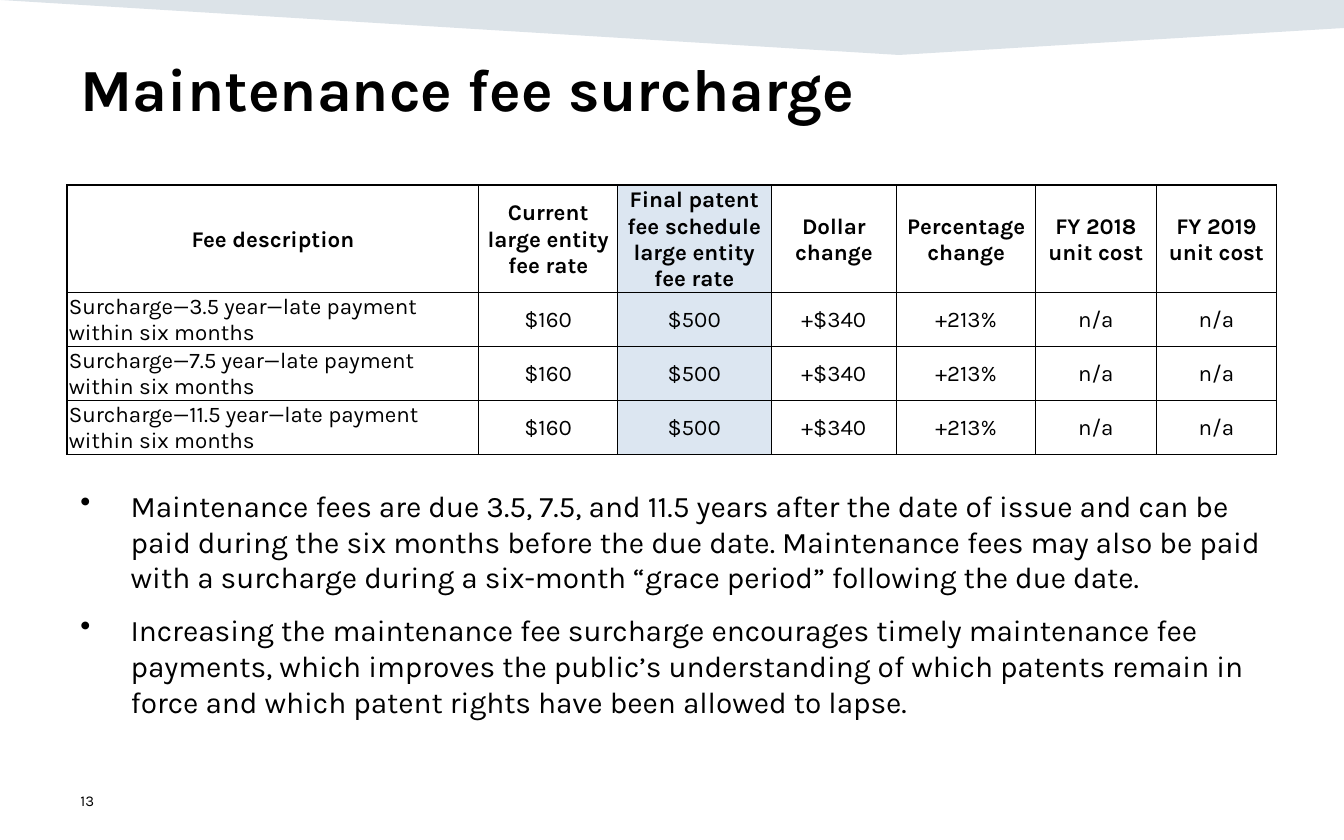
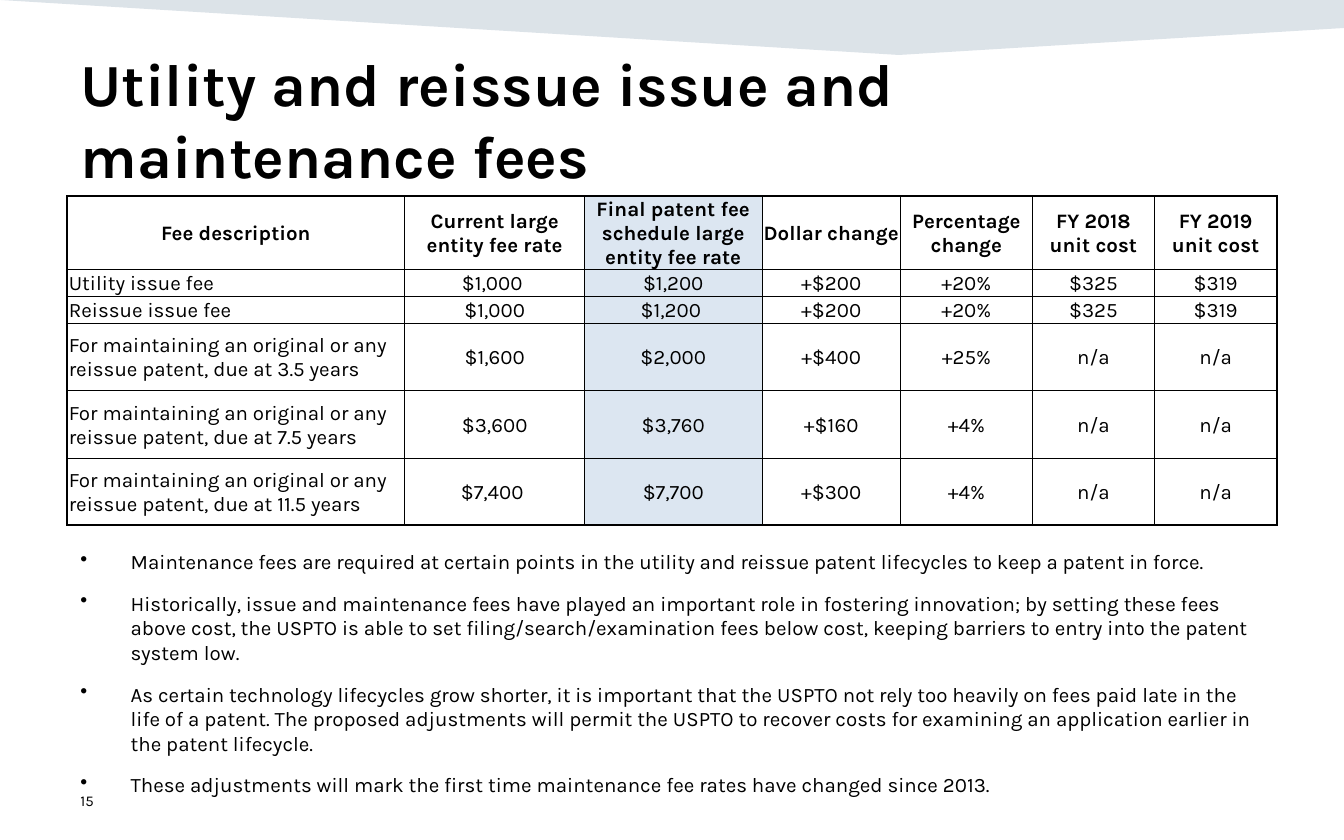
from dataclasses import dataclass

from lxml.etree import SubElement
from pptx import Presentation
from pptx.dml.color import RGBColor as RGB
from pptx.enum.text import MSO_ANCHOR as Anchor, MSO_AUTO_SIZE as AutoSize, PP_ALIGN as Align
from pptx.oxml.ns import qn
from pptx.util import Cm, Pt


@dataclass(frozen=True)
class Theme:
    font: str = "Karla"
    ink: str = "000000"
    paper: str = "FFFFFF"
    band: str = "164469"
    band_opacity: int = 15
    highlight: str = "DCE6F1"
    title_size: int = 32
    number_size: int = 8
    bullet_gap: int = 9
    thin: float = 0.5
    thick: float = 1


THEME = Theme()
SLIDE_W, SLIDE_H = 25.4, 15.88
MARGIN, CONTENT_W = 1.27, 22.86
BULLET_INDENT = 0.95
CELL_INSET = 0.03
FINAL_RATE_COLUMN = 2
BAND_OUTLINE = [(0, 0), (SLIDE_W, 0), (SLIDE_W, 0.53), (16.99, 1.04)]

SURCHARGE_HEADINGS = [
    "Fee description", "Current large entity fee rate",
    "Final patent fee schedule large entity fee rate",
    "Dollar change", "Percentage change", "FY 2018 unit cost", "FY 2019 unit cost",
]
SURCHARGE_ROWS = [
    [f"Surcharge—{years} year—late payment \nwithin six months",
     "$160", "$500", "+$340", "+213%", "n/a", "n/a"]
    for years in ("3.5", "7.5", "11.5")
]
SURCHARGE_POINTS = [
    "Maintenance fees are due 3.5, 7.5, and 11.5 years after the date of issue and can be "
    "paid during the six months before the due date. Maintenance fees may also be paid with "
    "a surcharge during a six-month “grace period” following the due date.",
    "Increasing the maintenance fee surcharge encourages timely maintenance fee payments, "
    "which improves the public’s understanding of which patents remain in force and which "
    "patent rights have been allowed to lapse.",
]

MAINTAINING = "For maintaining an original or any reissue patent, due at {} years"
ISSUE_ROWS = [
    ["Utility issue fee", "$1,000 ", "$1,200", "+$200", "+20%", "$325", "$319"],
    ["Reissue issue fee", "$1,000", "$1,200 ", "+$200", "+20%", "$325", "$319"],
    [MAINTAINING.format("3.5"), "$1,600", "$2,000", "+$400", "+25%", "n/a", "n/a"],
    [MAINTAINING.format("7.5"), "$3,600", "$3,760", "+$160", "+4%", "n/a", "n/a"],
    [MAINTAINING.format("11.5"), "$7,400 ", "$7,700", "+$300", "+4%", "n/a", "n/a"],
]
ISSUE_POINTS = [
    "Maintenance fees are required at certain points in the utility and reissue patent "
    "lifecycles to keep a patent in force.",
    "Historically, issue and maintenance fees have played an important role in fostering "
    "innovation; by setting these fees above cost, the USPTO is able to set "
    "filing/search/examination fees below cost, keeping barriers to entry into the patent "
    "system low.",
    "As certain technology lifecycles grow shorter, it is important that the USPTO not rely "
    "too heavily on fees paid late in the life of a patent. The proposed adjustments will "
    "permit the USPTO to recover costs for examining an application earlier in the patent "
    "lifecycle.",
    "These adjustments will mark the first time maintenance fee rates have changed since 2013.",
]


def write(paragraph, text, *, size, bold=False, align=Align.LEFT):
    paragraph.text = text
    paragraph.alignment = align
    for run in paragraph.runs:
        run.font.name = THEME.font
        run.font.size = Pt(size)
        run.font.bold = bold
        run.font.color.rgb = RGB.from_string(THEME.ink)


def place(shape, top, width, height, anchor=Anchor.TOP):
    """Set the box on the left margin and return its wrapping text frame."""
    shape.left, shape.top = Cm(MARGIN), Cm(top)
    shape.width, shape.height = Cm(width), Cm(height)
    frame = shape.text_frame
    frame.word_wrap = True
    frame.auto_size = AutoSize.NONE
    frame.vertical_anchor = anchor
    return frame


def add_text_frame(slide, *box, **options):
    return place(slide.shapes.add_textbox(0, 0, 0, 0), *box, **options)


def add_title(slide, text, top):
    frame = place(slide.shapes.title, top, CONTENT_W, 2.64)
    write(frame.paragraphs[0], text, size=THEME.title_size, bold=True)


def add_page_number(slide, number):
    frame = add_text_frame(slide, 14.71, 5.71, 0.84, anchor=Anchor.MIDDLE)
    write(frame.paragraphs[0], str(number), size=THEME.number_size)


def add_bullets(slide, points, top, height, size):
    frame = add_text_frame(slide, top, CONTENT_W, height)
    for index, point in enumerate(points):
        paragraph = frame.add_paragraph() if index else frame.paragraphs[0]
        write(paragraph, point, size=size)
        paragraph.space_before = Pt(THEME.bullet_gap)
        properties = paragraph._p.get_or_add_pPr()
        properties.set("marL", str(Cm(BULLET_INDENT)))
        properties.set("indent", str(-Cm(BULLET_INDENT)))
        SubElement(properties, qn("a:buChar"), char="•")


def set_borders(cell, widths):
    """Draw the cell's lines; widths come in the order left, right, top, bottom."""
    properties = cell._tc.get_or_add_tcPr()
    for side, width in zip("LRTB", widths):
        line = SubElement(properties, qn(f"a:ln{side}"), w=str(Pt(width)))
        fill = SubElement(line, qn("a:solidFill"))
        SubElement(fill, qn("a:srgbClr"), val=THEME.ink)


def add_fee_table(slide, rows, top, column_widths, row_heights, size, bottom_line):
    table = slide.shapes.add_table(
        len(rows), len(column_widths), Cm(MARGIN), Cm(top),
        Cm(CONTENT_W), Cm(sum(row_heights))).table
    table.first_row = table.horz_banding = False
    for column, width in zip(table.columns, column_widths):
        column.width = Cm(width)
    for row, height in zip(table.rows, row_heights):
        row.height = Cm(height)

    last_row, last_column = len(rows) - 1, len(column_widths) - 1
    for r, values in enumerate(rows):
        for c, value in enumerate(values):
            cell = table.cell(r, c)
            cell.vertical_anchor = Anchor.MIDDLE
            cell.margin_left = cell.margin_right = cell.margin_top = Cm(CELL_INSET)
            cell.margin_bottom = 0
            is_heading = r == 0
            write(cell.text_frame.paragraphs[0], value, size=size, bold=is_heading,
                  align=Align.CENTER if is_heading or c else Align.LEFT)
            set_borders(cell, (
                THEME.thin if c else THEME.thick,
                THEME.thick if c == last_column else THEME.thin,
                THEME.thick if is_heading else THEME.thin,
                bottom_line if r == last_row else THEME.thin))
            cell.fill.solid()
            cell.fill.fore_color.rgb = RGB.from_string(
                THEME.highlight if c == FINAL_RATE_COLUMN else THEME.paper)


def add_layout_band(slide):
    """Draw the top band and hand it to the layout, so that every slide shows it."""
    start, *corners = [(Cm(x), Cm(y)) for x, y in BAND_OUTLINE]
    builder = slide.shapes.build_freeform(*start)
    builder.add_line_segments(corners, close=True)
    band = builder.convert_to_shape()
    band.shadow.inherit = False
    band.line.fill.background()
    band.fill.solid()
    band.fill.fore_color.rgb = RGB.from_string(THEME.band)
    color = band.element.find(".//" + qn("a:srgbClr"))
    SubElement(color, qn("a:alpha"), val=str(THEME.band_opacity * 1000))
    slide.slide_layout.shapes.element.insert(2, band.element)


def add_surcharge_slide(deck, layout):
    slide = deck.slides.add_slide(layout)
    add_page_number(slide, 13)
    add_title(slide, "Maintenance fee surcharge", 0.86)
    add_bullets(slide, SURCHARGE_POINTS, 9.09, 5.31, size=16)
    add_fee_table(
        slide, [SURCHARGE_HEADINGS, *SURCHARGE_ROWS], 3.5,
        column_widths=[7.78, 2.62, 2.9, 2.38, 2.62, 2.28, 2.28],
        row_heights=[2.03] + [1.02] * 3, size=12, bottom_line=THEME.thin)


def add_issue_slide(deck, layout):
    slide = deck.slides.add_slide(layout)
    add_page_number(slide, 15)
    add_title(slide, "Utility and reissue issue and maintenance fees", 0.76)
    add_bullets(slide, ISSUE_POINTS, 10.26, 2.16, size=11)
    add_fee_table(
        slide, [SURCHARGE_HEADINGS, *ISSUE_ROWS], 3.71,
        column_widths=[6.38, 3.4, 3.35, 2.62, 2.49, 2.31, 2.31],
        row_heights=[1.38] + [0.51] * 2 + [1.27] * 3, size=11, bottom_line=THEME.thick)
    return slide


def main():
    deck = Presentation()
    deck.slide_width, deck.slide_height = Cm(SLIDE_W), Cm(SLIDE_H)
    title_only = deck.slide_layouts[5]
    add_surcharge_slide(deck, title_only)
    add_layout_band(add_issue_slide(deck, title_only))
    deck.save("out.pptx")


if __name__ == "__main__":
    main()
